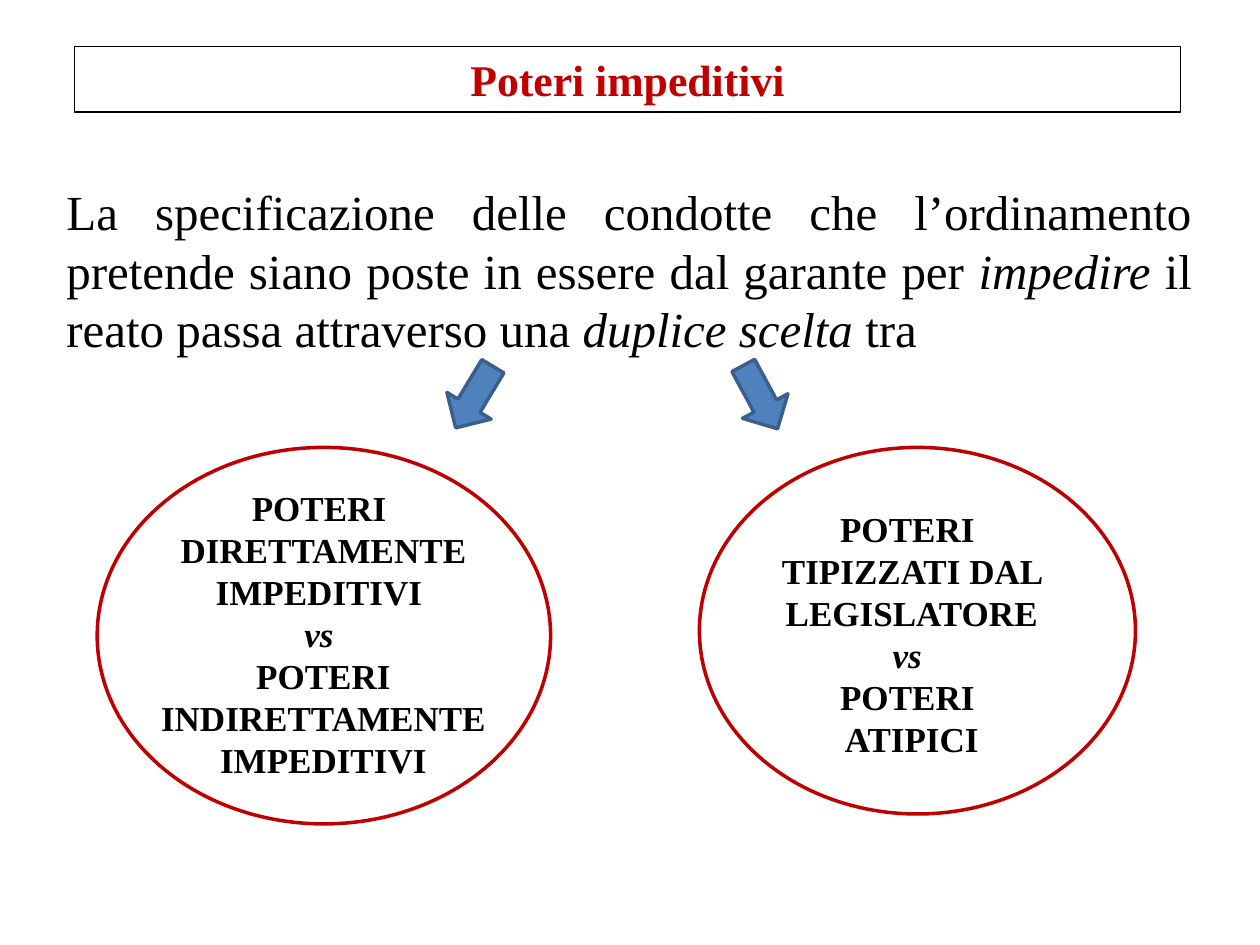
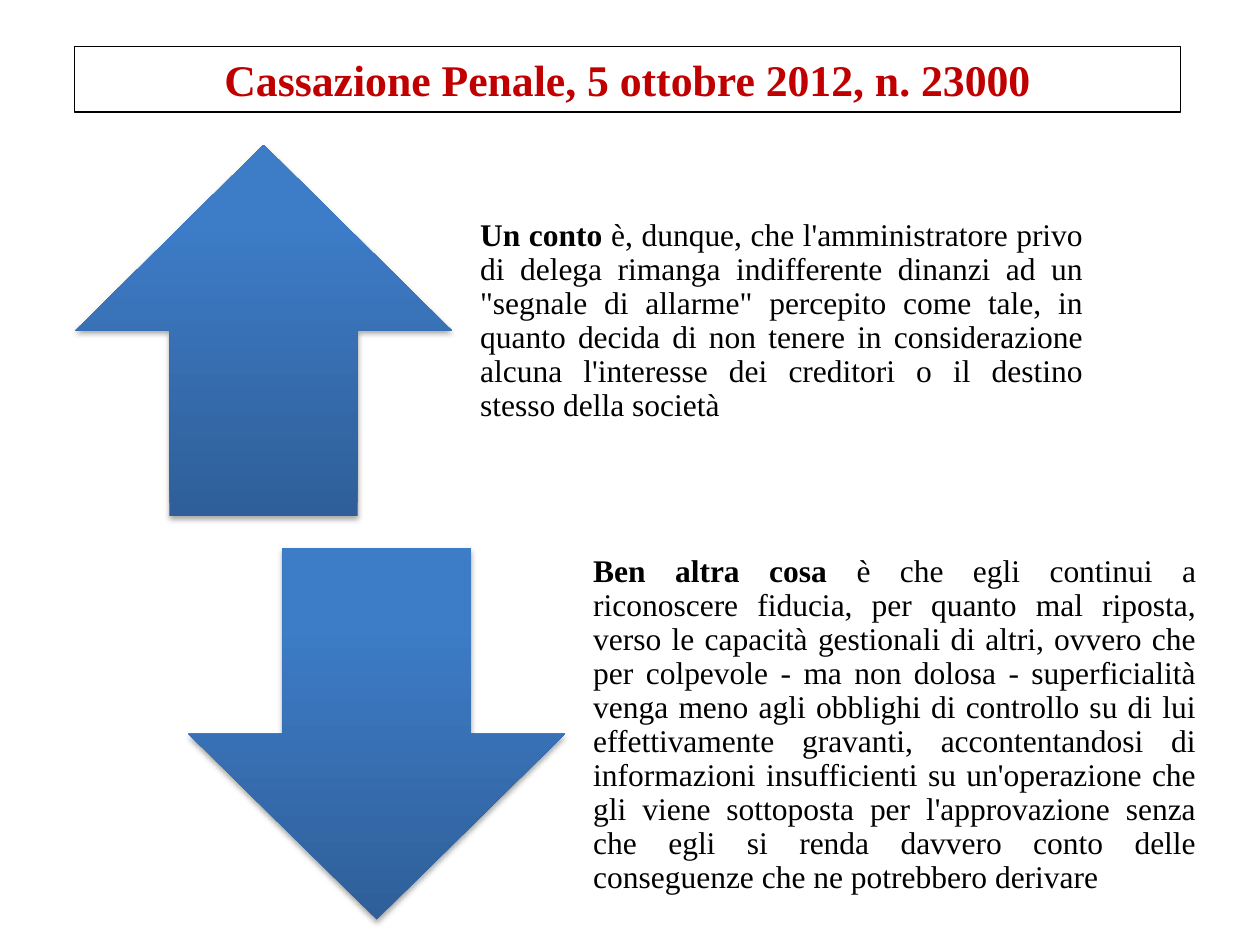
from lxml.etree import SubElement
from pptx import Presentation
from pptx.dml.color import RGBColor
from pptx.enum.shapes import MSO_SHAPE
from pptx.enum.text import MSO_ANCHOR, PP_ALIGN
from pptx.oxml.ns import qn
from pptx.util import Cm, Pt

BLACK = RGBColor(0x00, 0x00, 0x00)
RED = RGBColor(0xC0, 0x00, 0x00)
BLUE = RGBColor(0x4F, 0x81, 0xBD)
BLUE_EDGE = RGBColor(0x3A, 0x5F, 0x8C)
GRADIENT_DARK = RGBColor(0x2F, 0x5F, 0x99)
GRADIENT_LIGHT = RGBColor(0x3D, 0x7C, 0xC7)
FONT = "Times New Roman"


class Deck:
    def __init__(self):
        self.prs = Presentation()
        self.prs.slide_width = Cm(25.4)
        self.prs.slide_height = Cm(19.05)
        self.s = None

    def slide(self, title):
        self.s = self.prs.slides.add_slide(self.prs.slide_layouts[6])
        box = self.shape(MSO_SHAPE.RECTANGLE, 1.5, 0.94, 22.3, 1.32, BLACK, 0.75)
        self.fill_text(box.text_frame, [[(title, "b")]], 25, PP_ALIGN.CENTER, RED)

    def shape(self, kind, x, y, w, h, line=None, width=2, fill=None, rotation=0):
        sp = self.s.shapes.add_shape(kind, Cm(x), Cm(y), Cm(w), Cm(h))
        sp.shadow.inherit = False
        sp.rotation = rotation
        if fill is None:
            sp.fill.background()
        else:
            sp.fill.solid()
            sp.fill.fore_color.rgb = fill
        if line is None:
            sp.line.fill.background()
        else:
            sp.line.color.rgb = line
            sp.line.width = Pt(width)
        return sp

    def gradient_arrow(self, kind, x, y, w, h):
        sp = self.shape(kind, x, y, w, h)
        sp.fill.gradient()
        sp.fill.gradient_angle = 90
        stops = zip(sp.fill.gradient_stops, (0, 0.8), (GRADIENT_DARK, GRADIENT_LIGHT))
        for stop, position, color in stops:
            stop.position = position
            stop.color.rgb = color
        effects = sp._element.spPr.find(qn("a:effectLst"))
        shadow = SubElement(effects, qn("a:outerShdw"), blurRad="40000",
                            dist="23000", dir="5400000", rotWithShape="0")
        color = SubElement(shadow, qn("a:srgbClr"), val="000000")
        SubElement(color, qn("a:alpha"), val="35000")

    def text(self, x, y, w, h, paragraphs, size, align, spacing=None):
        tf = self.s.shapes.add_textbox(Cm(x), Cm(y), Cm(w), Cm(h)).text_frame
        self.fill_text(tf, paragraphs, size, align, spacing=spacing)
        return tf

    def fill_text(self, tf, paragraphs, size, align, color=BLACK, spacing=None):
        tf.word_wrap = True
        tf.vertical_anchor = MSO_ANCHOR.TOP
        for i, runs in enumerate(paragraphs):
            p = tf.add_paragraph() if i else tf.paragraphs[0]
            p.alignment = align
            p.line_spacing = spacing
            p.font.name = FONT
            p.font.size = Pt(size)
            p.font.color.rgb = color
            for content, style in runs:
                r = p.add_run()
                r.text = content
                r.font.bold = "b" in style
                r.font.italic = "i" in style

    def side_text(self, x, y, w, h, runs):
        tf = self.text(x, y, w, h, [runs], 18, PP_ALIGN.JUSTIFY, 0.9)
        tf.vertical_anchor = MSO_ANCHOR.MIDDLE
        tf.margin_top = 0
        tf.margin_left = tf.margin_right = tf.margin_bottom = Cm(0.36)


def powers_slide(deck):
    deck.slide("Poteri impeditivi")
    deck.text(1.09, 3.53, 23.19, 3.81, [[
        ("La specificazione delle condotte che l’ordinamento pretende siano "
         "poste in essere dal garante per ", ""),
        ("impedire", "i"),
        (" il reato passa attraverso una ", ""),
        ("duplice scelta ", "i"),
        ("tra", ""),
    ]], 28, PP_ALIGN.JUSTIFY)

    choices = [
        ((1.96, 9.02, 9.14, 7.59), (2.67, 9.68, 7.7, 6.25), [
            [("POTERI ", "b")],
            [("DIRETTAMENTE IMPEDITIVI ", "b")],
            [("vs ", "bi")],
            [("POTERI INDIRETTAMENTE IMPEDITIVI", "b")],
        ]),
        ((14.1, 9.02, 8.79, 7.39), (14.53, 10.11, 7.7, 5.38), [
            [("POTERI ", "b")],
            [("TIPIZZATI DAL LEGISLATORE", "b")],
            [("vs ", "bi")],
            [("POTERI ", "b")],
            [("ATIPICI", "b")],
        ]),
    ]
    for ellipse, label, paragraphs in choices:
        deck.shape(MSO_SHAPE.OVAL, *ellipse, RED)
        deck.text(*label, paragraphs, 20, PP_ALIGN.CENTER)

    for x, rotation in ((9.04, 31.1), (14.81, 331.6)):
        deck.shape(MSO_SHAPE.DOWN_ARROW, x, 7.28, 1.04, 1.45, BLUE_EDGE,
                   fill=BLUE, rotation=rotation)


def ruling_slide(deck):
    deck.slide("Cassazione Penale, 5 ottobre 2012, n. 23000")
    cases = [
        (MSO_SHAPE.UP_ARROW, "Un conto ",
         "è, dunque, che l'amministratore privo di delega rimanga indifferente "
         "dinanzi ad un \"segnale di allarme\" percepito come tale, in quanto "
         "decida di non tenere in considerazione alcuna l'interesse dei "
         "creditori o il destino stesso della società"),
        (MSO_SHAPE.DOWN_ARROW, "Ben altra cosa ",
         "è che egli continui a riconoscere fiducia, per quanto mal riposta, "
         "verso le capacità gestionali di altri, ovvero che per colpevole - ma "
         "non dolosa - superficialità venga meno agli obblighi di controllo su "
         "di lui effettivamente gravanti, accontentandosi di informazioni "
         "insufficienti su un'operazione che gli viene sottoposta per "
         "l'approvazione senza che egli si renda davvero conto delle "
         "conseguenze che ne potrebbero derivare"),
    ]
    for i, (arrow, lead, body) in enumerate(cases):
        x, y = 1.52 + 2.28 * i, 2.92 + 8.13 * i
        deck.gradient_arrow(arrow, x, y, 7.59, 7.49)
        deck.side_text(x + 7.8, y, 12.88, 7.49, [(lead, "b"), (body, "")])


def main():
    deck = Deck()
    powers_slide(deck)
    ruling_slide(deck)
    deck.prs.save("out.pptx")


if __name__ == "__main__":
    main()
